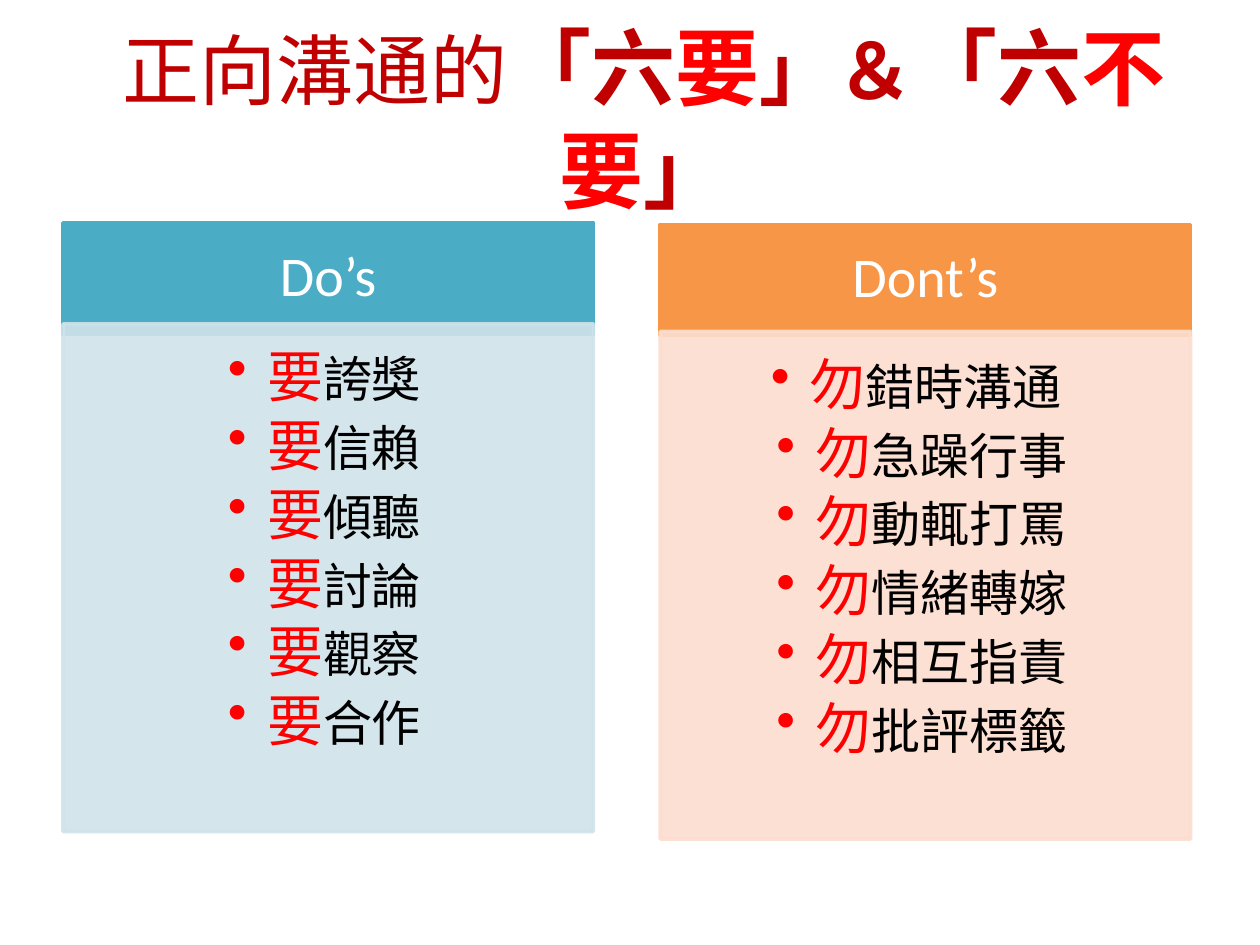
"""Build a slide that sets six do's beside six don'ts."""
import pptx
import pptx.util
import pptx.dml.color
import pptx.enum.shapes
import pptx.enum.text
import pptx.oxml
import pptx.oxml.ns

TITLE = [("正向溝通的", 44, False, "dark"), ("「六", 48, True, "dark"),
         ("要", 48, True, "red"), ("」＆", 44, True, "dark"),
         ("「六", 48, True, "dark"), ("不要", 48, True, "red"),
         ("」", 48, True, "dark")]
COLS = [
    {"head": "Do’s", "mark": "要", "fill": "teal", "pale": "ice",
     "tops": (1.77, 2.57),
     "items": ["誇獎", "信賴", "傾聽", "討論", "觀察", "合作"]},
    {"head": "Dont’s", "mark": "勿", "fill": "gold", "pale": "peach",
     "tops": (1.78, 2.63),
     "items": ["錯時溝通 ", "急躁行事", "動輒打罵", "情緒轉嫁", "相互指責", "批評標籤"]},
]
THEME = {
    "dark": "C00000", "red": "FF0000", "black": "000000", "white": "FFFFFF",
    "teal": "4BACC6", "gold": "F79646", "ice": "D0E3EA", "peach": "FCDDCF",
    "latin": "Calibri", "cjk": "Noto Sans CJK SC", "big": 32, "small": 28,
}
LEFT, STEP, WIDE = 0.5, 4.74, 4.21
HEAD, BODY = 0.88, 4.03
ALPHA = 90000
HANG = 0.31

Inch, Pt = pptx.util.Inches, pptx.util.Pt
qn = pptx.oxml.ns.qn
MID = pptx.enum.text.MSO_ANCHOR.MIDDLE
TOP = pptx.enum.text.MSO_ANCHOR.TOP


def color(key):
    return pptx.dml.color.RGBColor.from_string(THEME[key])


def put(item, vals):
    for key, val in vals.items():
        setattr(item, key, val)


def make(tag, vals):
    node = pptx.oxml.parse_xml(f'<a:{tag} {pptx.oxml.ns.nsdecls("a")}/>')
    for key, val in vals.items():
        node.set(key, str(val))
    return node


def frame(shape, anchor, pads):
    sides = ("margin_left", "margin_top", "margin_right", "margin_bottom")
    put(shape.text_frame, {"word_wrap": True, "vertical_anchor": anchor,
                           **dict(zip(sides, map(Inch, pads)))})
    return shape.text_frame


def write(para, runs, font, form):
    put(para, {"alignment": pptx.enum.text.PP_ALIGN.CENTER, **form})
    for text, size, bold, tint in runs:
        run = para.add_run()
        run.text = text
        put(run.font, {"name": THEME[font], "size": Pt(size), "bold": bold})
        run.font.color.rgb = color(tint)
        run._r.rPr.append(make("ea", {"typeface": THEME[font]}))


def panel(slide, place, tint, clear=False):
    shape = slide.shapes.add_shape(
        pptx.enum.shapes.MSO_SHAPE.RECTANGLE, *map(Inch, place))
    shape.shadow.inherit = False
    shape.fill.solid()
    shape.fill.fore_color.rgb = color(tint)
    shape.line.color.rgb = color(tint)
    shape.line.width = Pt(2)
    if clear:
        for node in shape.element.spPr.iter(qn("a:srgbClr")):
            node.append(make("alpha", {"val": ALPHA}))
    return shape


def column(slide, num, col):
    left = LEFT + num * STEP
    high, low = col["tops"]
    head = panel(slide, (left, high, WIDE, HEAD), col["fill"])
    text = frame(head, MID, (0.25, 0.14, 0.25, 0.14))
    write(text.paragraphs[0], [(col["head"], THEME["big"], False, "white")],
          "latin", {"line_spacing": 0.9})
    body = panel(slide, (left, low, WIDE, BODY), col["pale"], True)
    text = frame(body, TOP, (0.19, 0.19, 0.25, 0.28))
    for row, item in enumerate(col["items"]):
        para = text.add_paragraph() if row else text.paragraphs[0]
        runs = [(col["mark"], THEME["big"], False, "red"),
                (item, THEME["small"], False, "black")]
        write(para, runs, "cjk", {"level": 1, "line_spacing": Pt(35.1),
                                  "space_after": Pt(4.2)})
    for prop in body.element.iter(qn("a:pPr")):
        prop.set("marL", str(Inch(HANG)))
        prop.set("indent", str(-Inch(HANG)))
        prop.append(make("buChar", {"char": "•"}))


def main():
    deck = pptx.Presentation()
    put(deck, {"slide_width": Inch(10), "slide_height": Inch(7.5)})
    slide = deck.slides.add_slide(deck.slide_layouts[6])
    title = slide.shapes.add_textbox(*map(Inch, (LEFT, 0.3, 9.22, 1.25)))
    text = frame(title, MID, (0.1, 0.05, 0.1, 0.05))
    write(text.paragraphs[0], TITLE, "cjk", {"line_spacing": Pt(58.6)})
    for num, col in enumerate(COLS):
        column(slide, num, col)
    deck.save("out.pptx")


if __name__ == "__main__":
    main()
